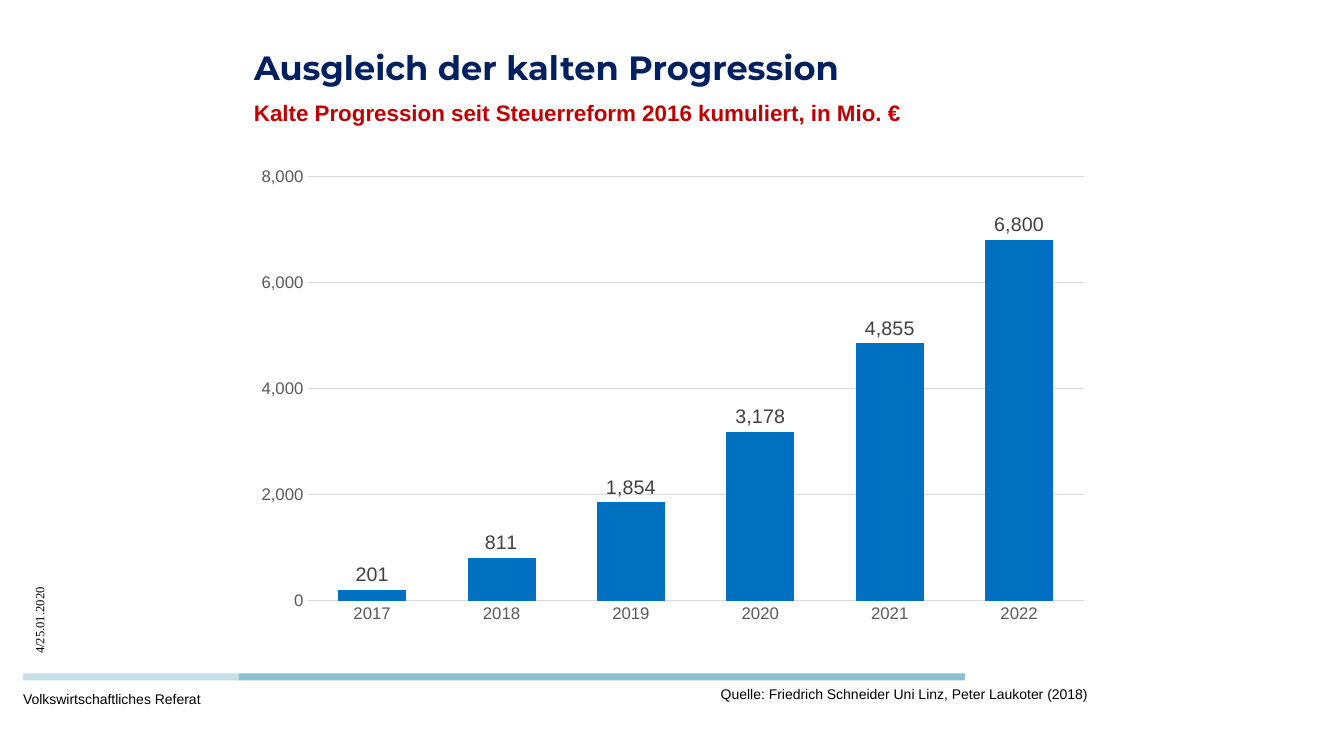
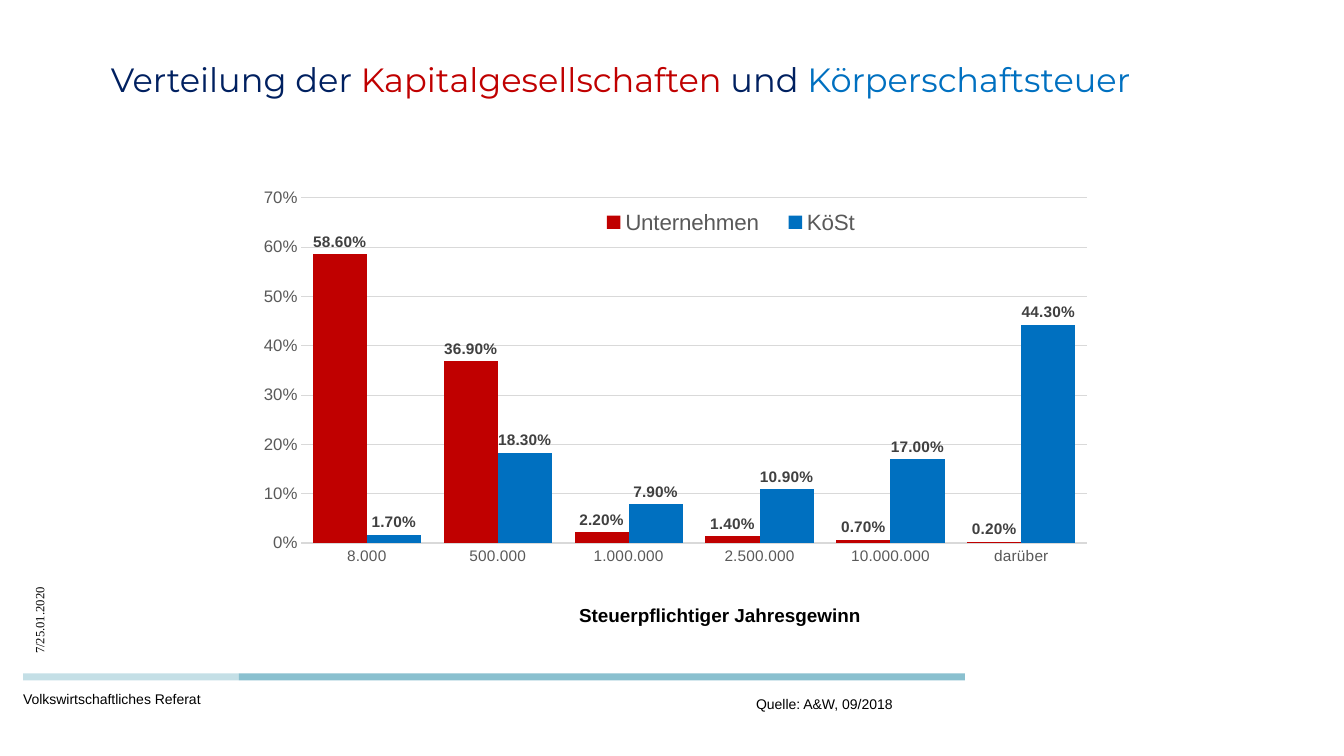
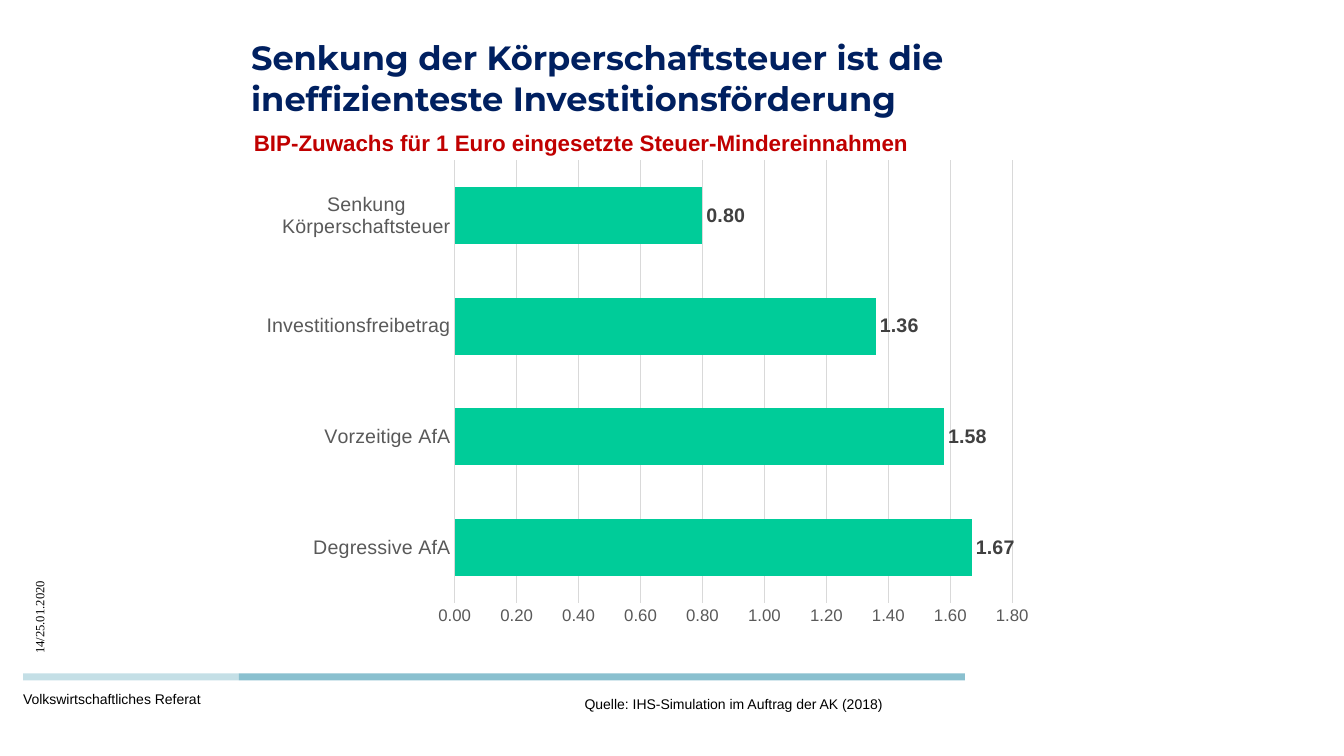
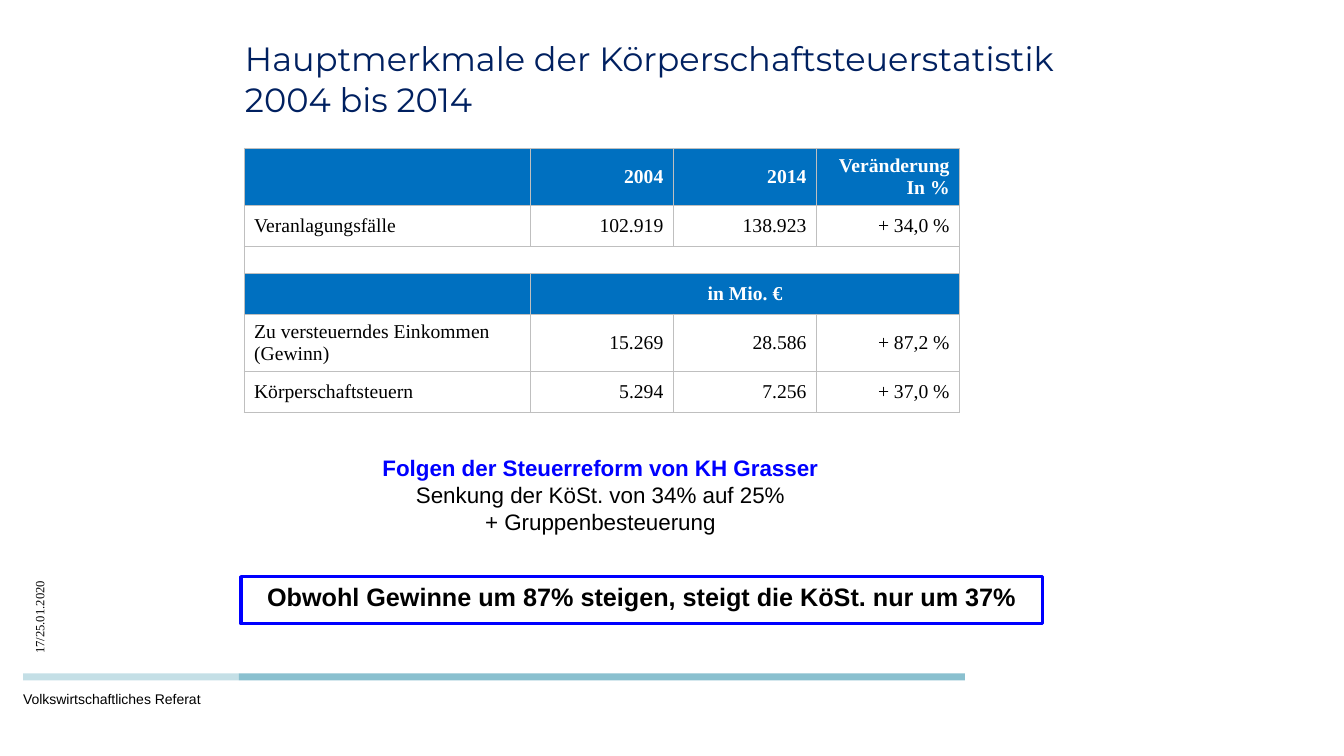
"""Build four slides on tax progression and corporate tax."""
from pptx import Presentation
from pptx.chart.data import CategoryChartData
from pptx.dml.color import RGBColor
from pptx.enum.chart import XL_CHART_TYPE, XL_LABEL_POSITION, XL_LEGEND_POSITION, XL_TICK_MARK
from pptx.enum.shapes import MSO_SHAPE
from pptx.enum.text import MSO_ANCHOR, MSO_AUTO_SIZE, PP_ALIGN
from pptx.oxml import parse_xml
from pptx.oxml.ns import nsdecls, qn
from pptx.util import Inches, Pt

COLUMN, BAR = XL_CHART_TYPE.COLUMN_CLUSTERED, XL_CHART_TYPE.BAR_CLUSTERED
LEFT, CENTER, RIGHT = PP_ALIGN.LEFT, PP_ALIGN.CENTER, PP_ALIGN.RIGHT
MIDDLE, TOP = MSO_ANCHOR.MIDDLE, MSO_ANCHOR.TOP
NO_TICK, OUTSIDE = XL_TICK_MARK.NONE, XL_LABEL_POSITION.OUTSIDE_END
RECT, TITLE_ONLY = MSO_SHAPE.RECTANGLE, 5
NAVY, RED, BLUE, GREEN, TEAL = "002060", "C00000", "0070C0", "00CC99", "8AC0CF"
PURE_BLUE, BLACK, WHITE = "0000FF", "000000", "FFFFFF"
AXIS_TEXT, LABEL_TEXT, GRID, BORDER = "595959", "404040", "D9D9D9", "BFBFBF"
SANS, SERIF, HEADING = "Arial", "Times New Roman", "Montserrat"

BANDS = [((2.37, 6.68, 7.2, 0.07), 100), ((0.23, 6.68, 2.14, 0.07), 50)]

SLIDES = [
    dict(
        number=4, title=[("Ausgleich der kalten Progression", NAVY)], bold=True,
        title_at=(2.42, 0.22, 8.5, 0.9),
        subtitle=("Kalte Progression seit Steuerreform 2016 kumuliert, in Mio. €",
                  (2.42, 0.93, 8.19, 0.37)),
        source=("Quelle: Friedrich Schneider Uni Linz, Peter Laukoter (2018)",
                (7.05, 6.72, 3.87, 0.28)),
        chart=dict(
            kind=COLUMN, at=(2.42, 1.57, 8.5, 4.7), plot=(3.05, 1.75, 7.7, 4.21),
            cats=["2017", "2018", "2019", "2020", "2021", "2022"],
            series=[("Series 1", [201, 811, 1854, 3178, 4855, 6800], BLUE)],
            top=8000, step=2000, axis_format="#,##0", label_format="#,##0",
            cat_size=12, label_size=14, label_bold=False, gap=90, overlap=-27)),
    dict(
        number=7, bold=False, title_at=(1, 0.33, 11.33, 0.9),
        title=[("Verteilung der ", NAVY), ("Kapitalgesellschaften", RED),
               (" und ", NAVY), ("Körperschaftsteuer", BLUE)],
        source=("Quelle: A&W, 09/2018", (7.4, 6.82, 1.55, 0.28)),
        chart=dict(
            kind=COLUMN, at=(2.45, 1.39, 8.5, 4.88), plot=(2.99, 1.97, 7.79, 3.46),
            cats=["8.000", "500.000", "1.000.000", "2.500.000", "10.000.000", "darüber"],
            series=[("Unternehmen", [0.586, 0.369, 0.022, 0.014, 0.007, 0.002], RED),
                    ("KöSt", [0.017, 0.183, 0.079, 0.109, 0.17, 0.443], BLUE)],
            top=0.7, step=0.1, axis_format="0%", label_format="0.00%",
            cat_size=11, label_size=11, label_bold=True, gap=42, overlap=0,
            legend=(5.8, 2.05, 2.9, 0.33),
            axis_title=("Steuerpflichtiger Jahresgewinn", (5.71, 6, 2.8, 0.25)))),
    dict(
        number=14, bold=True, title_at=(2.39, 0.32, 8.5, 0.9),
        title=[("Senkung der Körperschaftsteuer ist die "
                "ineffizienteste Investitionsförderung", NAVY)],
        subtitle=("BIP-Zuwachs für 1 Euro eingesetzte Steuer-Mindereinnahmen",
                  (2.42, 1.23, 6.77, 0.37)),
        source=("Quelle: IHS-Simulation im Auftrag der AK (2018)", (5.7, 6.82, 3.2, 0.28)),
        chart=dict(
            kind=BAR, at=(2.49, 1.49, 7.87, 4.8), plot=(4.51, 1.59, 5.53, 4.39),
            cats=["Degressive AfA", "Vorzeitige AfA", "Investitionsfreibetrag",
                  "Senkung Körperschaftsteuer"],
            series=[("Series 1", [1.67, 1.58, 1.36, 0.8], GREEN)],
            top=1.8, step=0.2, axis_format="0.00", label_format="0.00",
            cat_size=14, label_size=14, label_bold=True, gap=93, overlap=0)),
    dict(
        number=17, bold=False, title_at=(2.33, 0.33, 8.5, 0.9),
        title=[("Hauptmerkmale der Körperschaftsteuerstatistik 2004 bis 2014", NAVY)]),
]

TABLE_AT = (2.42, 1.47, 7.09, 2.62)
COL_WIDTHS = [2.84, 1.42, 1.42, 1.42]
TABLE_ROWS = [
    (0.54, ["", "2004", "2014", "Veränderung\nIn %"]),
    (0.41, ["Veranlagungsfälle", "102.919", "138.923", "+ 34,0 %"]),
    (0.26, ["", "", "", ""]),
    (0.4, ["", "in Mio. €", "", ""]),
    (0.54, ["Zu versteuerndes Einkommen\n(Gewinn)", "15.269", "28.586", "+ 87,2 %"]),
    (0.41, ["Körperschaftsteuern", "5.294", "7.256", "+ 37,0 %"]),
]
HEADER_ROWS, SPACER_ROW, UNIT_ROW = (0, 3), 2, 3
REFORM_HEAD = "Folgen der Steuerreform von KH Grasser"
REFORM_LINES = ["Senkung der KöSt. von 34% auf 25%", "+ Gruppenbesteuerung"]
CONCLUSION = "Obwohl Gewinne um 87% steigen, steigt die KöSt. nur um 37%"


def rgb(color):
    return RGBColor.from_string(color)


def box(at):
    return [Inches(v) for v in at]


def style(font, size, color=BLACK, name=SANS, bold=False):
    font.size, font.name, font.bold = Pt(size), name, bold
    font.color.rgb = rgb(color)


def write(tf, paragraphs, size, name=SANS, bold=False, color=BLACK, align=LEFT,
          spacing=None):
    """Fill a text frame; a paragraph is a string or a list of (text, colour)."""
    for i, runs in enumerate(paragraphs):
        p = tf.paragraphs[0] if i == 0 else tf.add_paragraph()
        p.alignment = align
        if spacing:
            p.line_spacing = Pt(spacing)
        for text, run_color in [(runs, color)] if isinstance(runs, str) else runs:
            r = p.add_run()
            r.text = text
            style(r.font, size, run_color, name, bold)


def add_text(s, paragraphs, at, size, wrap=True, **fmt):
    sp = s.shapes.add_textbox(*box(at))
    sp.text_frame.word_wrap = wrap
    write(sp.text_frame, paragraphs, size, **fmt)
    return sp


def add_rect(s, at, fill=None, line=None):
    sp = s.shapes.add_shape(RECT, *box(at))
    sp.shadow.inherit = False
    if fill:
        sp.fill.solid()
        sp.fill.fore_color.rgb = rgb(fill)
    else:
        sp.fill.background()
    if line:
        sp.line.color.rgb, sp.line.width = rgb(line), Pt(2.25)
    else:
        sp.line.fill.background()
    return sp


def add_frame(s, number):
    """Add the footer, the page mark and the bands every slide shares."""
    add_text(s, ["Volkswirtschaftliches Referat"], (0.13, 6.8, 3.78, 0.26), 10)
    mark = add_text(s, [f"{number}/25.01.2020"], (-0.28, 5.79, 1.34, 0.25), 9, name=SERIF)
    mark.rotation = 270
    for at, opacity in BANDS:
        sp = add_rect(s, at, TEAL)
        color = sp.fill._xPr.find(qn("a:solidFill"))[0]
        color.append(parse_xml(f'<a:alpha {nsdecls("a")} val="{opacity * 1000}"/>'))


def add_title(s, runs, at, bold):
    sp = s.shapes.title
    sp.left, sp.top, sp.width, sp.height = box(at)
    tf = sp.text_frame
    tf.auto_size, tf.vertical_anchor, tf.word_wrap = MSO_AUTO_SIZE.NONE, MIDDLE, True
    write(tf, [runs], 24, name=HEADING, bold=bold)


def place(element, at, chart_at, inner=False):
    """Fix a chart part at a slide position given in inches."""
    left, top, width, height = chart_at
    parts = dict(x=(at[0] - left) / width, y=(at[1] - top) / height,
                 w=at[2] / width, h=at[3] / height)
    target = '<c:layoutTarget val="inner"/>' if inner else ""
    modes = "".join(f'<c:{k}Mode val="edge"/>' for k in "xy")
    values = "".join(f'<c:{k} val="{v:.4f}"/>' for k, v in parts.items())
    for old in element.findall(qn("c:layout")):
        element.remove(old)
    layout = parse_xml(f'<c:layout {nsdecls("c")}><c:manualLayout>{target}{modes}{values}'
                       '</c:manualLayout></c:layout>')
    overlay = element.find(qn("c:overlay"))
    if overlay is None:
        element.insert(0, layout)
    else:
        overlay.addprevious(layout)


def add_chart(s, spec_of):
    """Add a clustered chart with value labels."""
    c = spec_of
    data = CategoryChartData(number_format=c["label_format"])
    data.categories = c["cats"]
    for name, values, _ in c["series"]:
        data.add_series(name, values)
    chart = s.shapes.add_chart(c["kind"], *box(c["at"]), data).chart
    chart.has_title = False
    style(chart.font, 12)

    plot = chart.plots[0]
    plot.vary_by_categories = False
    plot.gap_width, plot.overlap = c["gap"], c["overlap"]
    for series, (_, _, color) in zip(plot.series, c["series"]):
        series.format.fill.solid()
        series.format.fill.fore_color.rgb = rgb(color)
    plot.has_data_labels = True
    labels = plot.data_labels
    labels.show_value, labels.position = True, OUTSIDE
    labels.number_format, labels.number_format_is_linked = c["label_format"], False
    style(labels.font, c["label_size"], LABEL_TEXT, bold=c["label_bold"])

    cat, val = chart.category_axis, chart.value_axis
    for axis, size in ((cat, c["cat_size"]), (val, 12)):
        axis.major_tick_mark = axis.minor_tick_mark = NO_TICK
        style(axis.tick_labels.font, size, AXIS_TEXT)
    val.minimum_scale, val.maximum_scale, val.major_unit = 0, c["top"], c["step"]
    val.tick_labels.number_format = c["axis_format"]
    val.tick_labels.number_format_is_linked = False
    val.format.line.fill.background()
    val.has_major_gridlines = True
    for line in (cat.format.line, val.major_gridlines.format.line):
        line.color.rgb, line.width = rgb(GRID), Pt(0.75)

    place(chart._chartSpace.xpath("c:chart/c:plotArea")[0], c["plot"], c["at"], inner=True)
    chart.has_legend = "legend" in c
    if chart.has_legend:
        legend = chart.legend
        legend.position, legend.include_in_layout = XL_LEGEND_POSITION.TOP, False
        style(legend.font, 16, AXIS_TEXT)
        place(legend._element, c["legend"], c["at"])
    if "axis_title" in c:
        text, at = c["axis_title"]
        write(cat.axis_title.text_frame, [text], 13.5, bold=True)
        place(cat.axis_title._element, at, c["at"])


def add_borders(cell):
    tc_pr = cell._tc.get_or_add_tcPr()
    for side in "LRTB":
        tc_pr.append(parse_xml(
            f'<a:ln{side} {nsdecls("a")} w="{Pt(0.5)}"><a:solidFill>'
            f'<a:srgbClr val="{BORDER}"/></a:solidFill></a:ln{side}>'))


def add_statistics(s):
    """Add the table of corporate tax figures."""
    table = s.shapes.add_table(len(TABLE_ROWS), len(COL_WIDTHS), *box(TABLE_AT)).table
    table.first_row = table.horz_banding = False
    for column, width in zip(table.columns, COL_WIDTHS):
        column.width = Inches(width)
    for i, (height, texts) in enumerate(TABLE_ROWS):
        table.rows[i].height = Inches(height)
        header = i in HEADER_ROWS
        for j, text in enumerate(texts):
            cell = table.cell(i, j)
            add_borders(cell)
            cell.vertical_anchor = MIDDLE
            if header:
                cell.fill.solid()
                cell.fill.fore_color.rgb = rgb(BLUE)
            else:
                cell.fill.background()
            if text:
                align = LEFT if j == 0 else CENTER if i == UNIT_ROW else RIGHT
                write(cell.text_frame, text.split("\n"), 14, name=SERIF, bold=header,
                      color=WHITE if header else BLACK, align=align)
            else:
                end = cell.text_frame.paragraphs[0]._p.get_or_add_endParaRPr()
                end.set("sz", "1000")
    for row, first in ((SPACER_ROW, 0), (UNIT_ROW, 1)):
        table.cell(row, first).merge(table.cell(row, len(COL_WIDTHS) - 1))


def add_conclusion(s):
    sp = add_text(s, [REFORM_HEAD], (3.12, 4.46, 5.67, 1.02), 16, bold=True,
                  color=PURE_BLUE, align=CENTER)
    for line in REFORM_LINES:
        p = sp.text_frame.add_paragraph()
        p.alignment = CENTER
        r = p.add_run()
        r.text = line
        style(r.font, 16)
    frame = add_rect(s, (2.39, 5.72, 7.95, 0.47), line=PURE_BLUE)
    frame.text_frame.vertical_anchor, frame.text_frame.word_wrap = TOP, True
    write(frame.text_frame, [CONCLUSION], 18, bold=True, align=CENTER)


def main():
    prs = Presentation()
    prs.slide_width, prs.slide_height = Inches(13.33), Inches(7.5)
    for content in SLIDES:
        s = prs.slides.add_slide(prs.slide_layouts[TITLE_ONLY])
        add_frame(s, content["number"])
        add_title(s, content["title"], content["title_at"], content["bold"])
        if "chart" in content:
            add_chart(s, content["chart"])
            text, at = content["source"]
            add_text(s, [text], at, 10, wrap=False, spacing=14)
        else:
            add_statistics(s)
            add_conclusion(s)
        if "subtitle" in content:
            text, at = content["subtitle"]
            add_text(s, [text], at, 16, wrap=False, bold=True, color=RED)
    prs.save("out.pptx")


if __name__ == "__main__":
    main()
